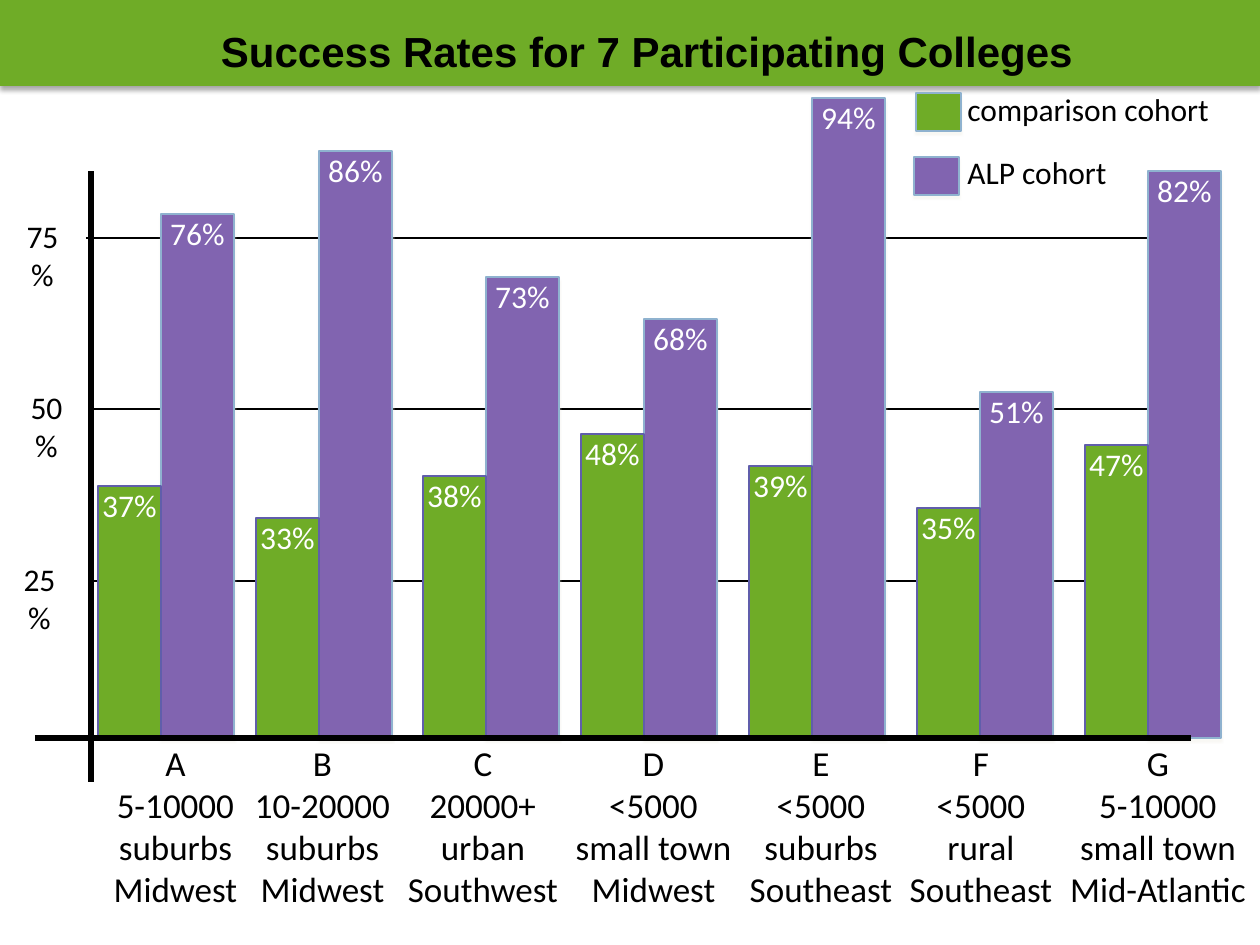
"""Build the slide of success rates for seven colleges."""
from lxml.etree import SubElement as Sub
from pptx import Presentation
from pptx.dml.color import RGBColor
from pptx.enum.shapes import MSO_CONNECTOR as Link, MSO_SHAPE as Form
from pptx.enum.text import MSO_ANCHOR as Anchor, MSO_AUTO_SIZE as Fit, PP_ALIGN as Align
from pptx.oxml.ns import qn
from pptx.util import Pt

PX = 914400 // 126
GREEN, PURPLE, BLACK, WHITE = "6FAC27", "8164B0", "000000", "FFFFFF"
PALE, INDIGO = "8FB2CF", "605EAB"
SOFT, DARK = ("EEECE1", 1, 2), (BLACK, 3.1, 1.8)
BASE, LOW, HIGH = 738, 63, 73

COLLEGES = [
    (98, 486, "37%", 214, "76%", 100, 151, "A\n5-10000\nsuburbs\nMidwest"),
    (256, 518, "33%", 151, "86%", 242, 161, "B\n10-20000\nsuburbs\nMidwest"),
    (423, 476, "38%", 277, "73%", 394, 178, "C\n20000+\nurban\nSouthwest"),
    (581, 434, "48%", 319, "68%", 562, 183, "D\n<5000\nsmall town\nMidwest"),
    (749, 466, "39%", 98, "94%", 736, 170, "E\n<5000\nsuburbs\nSoutheast"),
    (917, 508, "35%", 392, "51%", 896, 170, "F\n<5000\nrural\nSoutheast"),
    (1085, 445, "47%", 171, "82%", 1056, 204, "G\n5-10000\nsmall town\nMid-Atlantic"),
]
TICKS = [
    (90, 1202, 409, 20, "50%"),
    (86, 1200, 238, 16, "75%"),
    (91, 1205, 581, 13, "25%"),
]
LEGEND = [
    (916, 93, GREEN, 84, 270, "comparison cohort"),
    (914, 157, PURPLE, 147, 166, "ALP cohort"),
]


def tint(code):
    return RGBColor.from_string(code)


def write(frame, text, size=18, color=BLACK, font="Calibri", bold=False,
          align=Align.CENTER, anchor=Anchor.TOP, inset=0, wrap=True, fit=Fit.NONE):
    frame.word_wrap, frame.auto_size, frame.vertical_anchor = wrap, fit, anchor
    if inset is not None:
        frame.margin_left = frame.margin_right = inset * PX
        frame.margin_top = frame.margin_bottom = inset * PX
    for i, line in enumerate(text.split("\n")):
        para = frame.add_paragraph() if i else frame.paragraphs[0]
        para.alignment = align
        run = para.add_run()
        run.text = line
        run.font.size, run.font.name, run.font.bold = Pt(size), font, bold
        run.font.color.rgb = tint(color)


class Painter:
    def __init__(self, slide):
        self.slide = slide

    def rect(self, x, y, w, h, fill, line=None, shadow=None, text=None):
        shape = self.slide.shapes.add_shape(Form.RECTANGLE, *(n * PX for n in (x, y, w, h)))
        shape.fill.solid()
        shape.fill.fore_color.rgb = tint(fill)
        if line:
            shape.line.color.rgb = tint(line)
            shape.line.width = Pt(0.75)
        else:
            shape.line.fill.background()
        shape.shadow.inherit = False
        if shadow:
            self.shade(shape, *shadow)
        if text:
            write(shape.text_frame, text, color=WHITE)

    def shade(self, shape, color, blur, dist):
        effects = shape.element.spPr.find(qn("a:effectLst"))
        outer = Sub(effects, qn("a:outerShdw"), blurRad=str(Pt(blur)), dist=str(Pt(dist)),
                    dir="5400000", rotWithShape="0")
        code = Sub(outer, qn("a:srgbClr"), val=color)
        Sub(code, qn("a:alpha"), val="35000")

    def line(self, x1, y1, x2, y2, width):
        rule = self.slide.shapes.add_connector(Link.STRAIGHT, *(n * PX for n in (x1, y1, x2, y2)))
        rule.line.color.rgb = tint(BLACK)
        rule.line.width = Pt(width)
        Sub(rule.element.spPr, qn("a:effectLst"))

    def text(self, x, y, w, h, words, **style):
        box = self.slide.shapes.add_textbox(*(n * PX for n in (x, y, w, h)))
        write(box.text_frame, words, **style)


def main():
    deck = Presentation()
    deck.slide_width, deck.slide_height = 1260 * PX, 945 * PX
    pen = Painter(deck.slides.add_slide(deck.slide_layouts[6]))
    free = {"inset": None, "wrap": False, "fit": Fit.SHAPE_TO_FIT_TEXT}

    pen.rect(0, 0, 1260, 86, GREEN, shadow=DARK)
    pen.text(84, 22, 1126, 58, "Success Rates for 7 Participating Colleges", size=24,
             font="Arial", bold=True, anchor=Anchor.MIDDLE, inset=5)
    for start, end, y, x, label in TICKS:
        pen.line(start, y, end, y, 1)
        pen.text(x, y - 21, 53, 38, label)
    pen.line(91, 782, 91, 171, 3)

    for x, y, fill, top, width, label in LEGEND:
        pen.rect(x, y, 45, 38, fill, PALE, SOFT)
        pen.text(955, top, width, 50, label, align=Align.LEFT, **free)

    for x, _, _, top, rate, *_ in COLLEGES:
        pen.rect(x + LOW, top, HIGH, BASE - top, PURPLE, PALE, SOFT, rate)
    for x, top, rate, *_ in COLLEGES:
        pen.rect(x, top, LOW, BASE - top, GREEN, INDIGO, text=rate)
    pen.line(35, BASE, 1191, BASE, 3)
    for *_, left, width, label in COLLEGES:
        pen.text(left, 735, width, 183, label, size=20, **free)
    deck.save("out.pptx")


if __name__ == "__main__":
    main()
